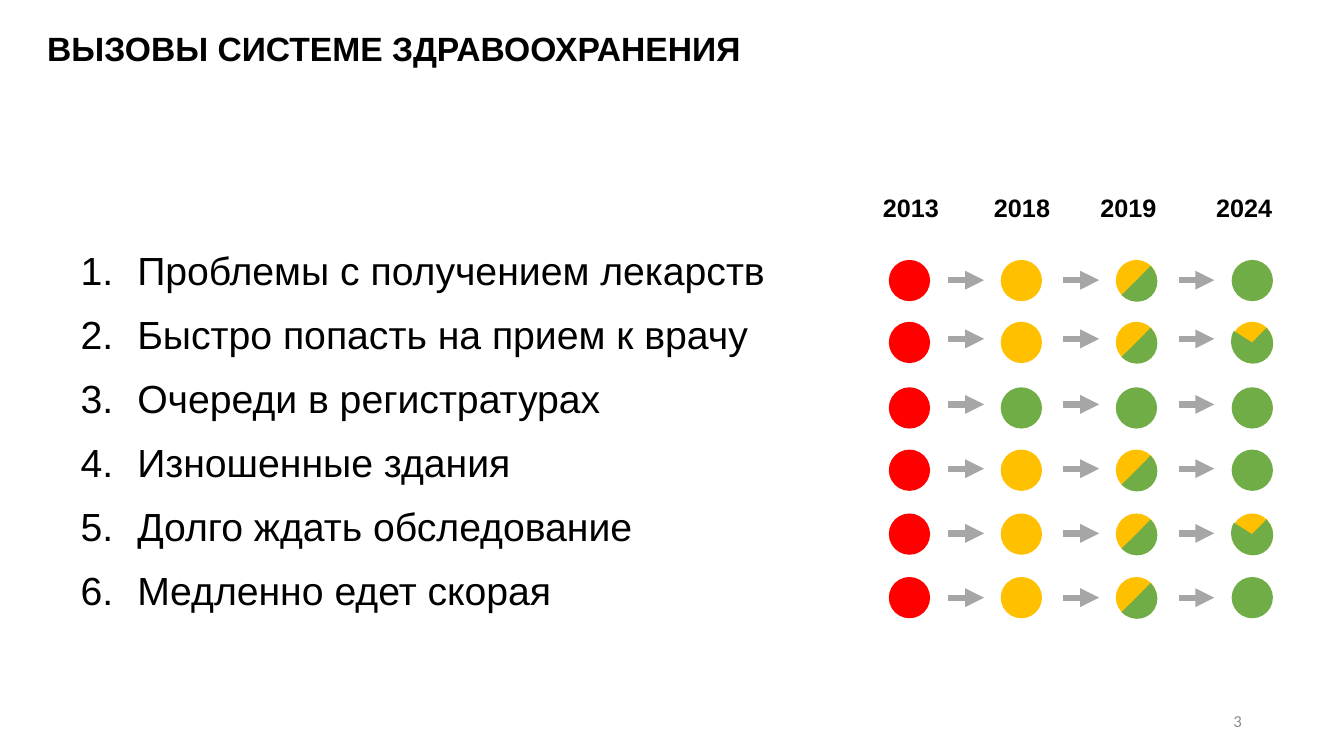
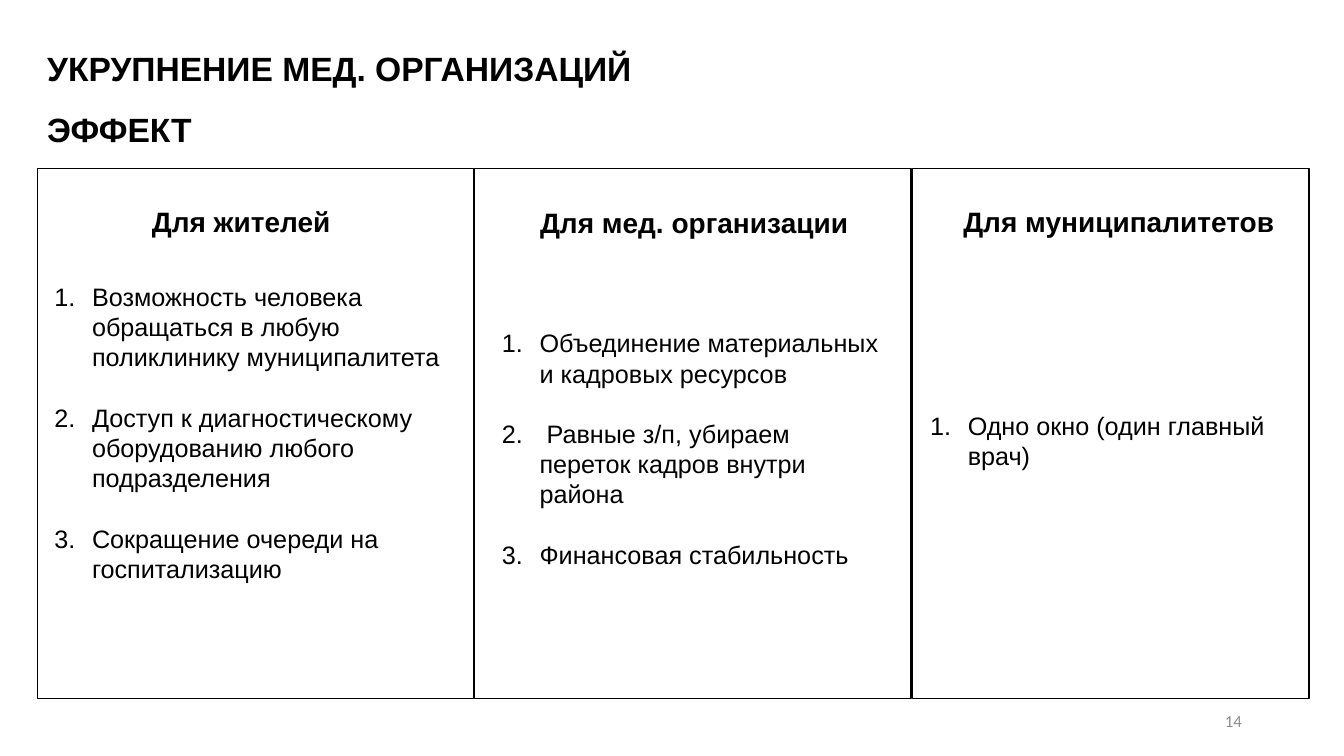
from lxml import etree
from pptx import Presentation
from pptx import util as u
from pptx.dml.color import RGBColor
from pptx.enum import shapes, text
from pptx.oxml.ns import qn

COLORS = {
    "black": "000000", "white": "FFFFFF", "gray": "A6A6A6", "number": "8C8C8C",
    "red": "FF0000", "yellow": "FFC000", "green": "70AD47",
}
ALIGN, ANCHOR = text.PP_ALIGN, text.MSO_ANCHOR
SHAPE = shapes.MSO_SHAPE
DOT = 1.04  # diameter of a status dot, cm


def color(name):
    return RGBColor.from_string(COLORS[name])


def write(frame, lines, size=18, bold=False, ink="black", font="Arial",
          align=ALIGN.LEFT, spacing=None, before=0, first=0, indent=0):
    """Fill a text frame; an indent (cm) makes a numbered list."""
    for index, line in enumerate(lines):
        para = frame.add_paragraph() if index else frame.paragraphs[0]
        para.alignment = align
        para.line_spacing = spacing
        para.space_before = u.Pt(before if index else first)
        span = para.add_run()
        span.text = line
        span.font.size, span.font.bold, span.font.name = u.Pt(size), bold, font
        span.font.color.rgb = color(ink)
        if indent:
            props = para._p.get_or_add_pPr()
            props.set("marL", str(u.Cm(indent)))
            props.set("indent", str(-u.Cm(indent)))
            etree.SubElement(props, qn("a:buFont"), typeface="+mj-lt")
            etree.SubElement(props, qn("a:buAutoNum"), type="arabicPeriod")


class Deck:
    def __init__(self):
        self.file = Presentation()
        self.file.slide_width, self.file.slide_height = u.Cm(33.87), u.Cm(19.05)
        self.page = None

    def new_page(self, number, title, height, **style):
        self.page = self.file.slides.add_slide(self.file.slide_layouts[6])
        self.text((23.93, 17.65, 7.62, 1.02), [number], size=12, ink="number",
                  font="Calibri", align=ALIGN.RIGHT, anchor=ANCHOR.MIDDLE)
        self.text((0.94, 0.58, 31.5, height), title, size=24, bold=True, **style)

    def text(self, area, lines, anchor=ANCHOR.TOP, wrap=True, **style):
        box = self.page.shapes.add_textbox(*map(u.Cm, area))
        box.text_frame.word_wrap = wrap
        box.text_frame.vertical_anchor = anchor
        write(box.text_frame, lines, **style)

    def shape(self, kind, area, fill, line=None):
        shape = self.page.shapes.add_shape(kind, *map(u.Cm, area))
        shape.shadow.inherit = False
        shape.fill.solid()
        shape.fill.fore_color.rgb = color(fill)
        if line:
            shape.line.color.rgb = color(line)
            shape.line.width = u.Pt(1)
        else:
            shape.line.fill.background()
        return shape

    def dot(self, left, top, fill):
        self.shape(SHAPE.OVAL, (left, top, DOT, DOT), fill)

    def split_dot(self, left, top, end):
        """Yellow dot with a green sector whose size is set by end."""
        self.dot(left, top, "yellow")
        sector = self.shape(SHAPE.PIE, (left - 0.03, top, DOT + 0.05, DOT), "green")
        sector.rotation = 225.7
        sector.adjustments[0], sector.adjustments[1] = 53.17, end

    def arrow(self, left, top, length):
        line = self.page.shapes.add_connector(
            shapes.MSO_CONNECTOR.STRAIGHT,
            u.Cm(left), u.Cm(top), u.Cm(left + length), u.Cm(top))
        line.line.color.rgb = color("gray")
        line.line.width = u.Pt(4.5)
        etree.SubElement(line.line._get_or_add_ln(), qn("a:tailEnd"), type="triangle")
        etree.SubElement(line._element.spPr, qn("a:effectLst"))


def challenges(deck):
    deck.new_page("3", ["ВЫЗОВЫ СИСТЕМЕ ЗДРАВООХРАНЕНИЯ"], 1.28)
    deck.text((1.78, 5.66, 22.12, 10.34), [
        "Проблемы с получением лекарств", "Быстро попасть на прием к врачу",
        "Очереди в регистратурах", "Изношенные здания",
        "Долго ждать обследование", "Медленно едет скорая",
    ], size=28, before=12, first=12, indent=1.43, anchor=ANCHOR.MIDDLE)

    # Years over the columns
    for year, left in zip(("2013", "2018", "2019", "2024"), (22, 24.8, 27.48, 30.4)):
        deck.text((left, 4.72, 1.93, 1.02), [year], bold=True, wrap=False)

    # Status of each challenge by year: dot top, arrow height, statuses
    sector_ends = {"half": 162, "most": 207.99}
    usual = ("red", "yellow", "half", "green")
    partial = ("red", "yellow", "half", "most")
    rows = (
        (6.55, 7.06, usual),
        (8.11, 8.54, partial),
        (9.76, 10.19, ("red", "green", "green", "green")),
        (11.33, 11.81, usual),
        (12.94, 13.44, partial),
        (14.54, 15.06, usual),
    )
    for top, middle, statuses in rows:
        for left, status in zip((22.4, 25.22, 28.12, 31.04), statuses):
            if status in sector_ends:
                deck.split_dot(left, top, sector_ends[status])
            else:
                deck.dot(left, top, status)
        for step in range(3):
            deck.arrow(23.9 + 2.9 * step, middle, 0.9)


def effect(deck):
    deck.new_page("14", ["УКРУПНЕНИЕ МЕД. ОРГАНИЗАЦИЙ", "ЭФФЕКТ"], 3.15, spacing=1.5)
    # Panel left and width, heading area, list area, heading, list
    columns = (
        (0.94, 11, (1.85, 5.03, 8.46, 1.12), (1.12, 6.96, 10.85, 11.02),
         "Для жителей",
         ["Возможность человека обращаться в любую поликлинику муниципалитета",
          "Доступ к диагностическому оборудованию любого подразделения",
          "Сокращение очереди на госпитализацию"]),
        (11.96, 11, (13.23, 5.05, 8.53, 1.12), (12.4, 8.13, 10.13, 6.4),
         "Для мед. организации",
         ["Объединение материальных и кадровых ресурсов",
          " Равные з/п, убираем переток кадров внутри района",
          "Финансовая стабильность"]),
        (22.99, 10, (23.93, 5.03, 8.53, 1.12), (23.19, 10.21, 9.58, 3.33),
         "Для муниципалитетов",
         ["Одно окно (один главный врач)"]),
    )
    for left, width, head_area, list_area, heading, items in columns:
        deck.shape(SHAPE.RECTANGLE, (left, 4.24, width, 13.36), "white", line="black")
        deck.text(head_area, [heading], size=20, bold=True, align=ALIGN.CENTER)
        deck.text(list_area, items, before=21.6, indent=0.95)


def main():
    deck = Deck()
    challenges(deck)
    effect(deck)
    deck.file.save("out.pptx")


if __name__ == "__main__":
    main()
